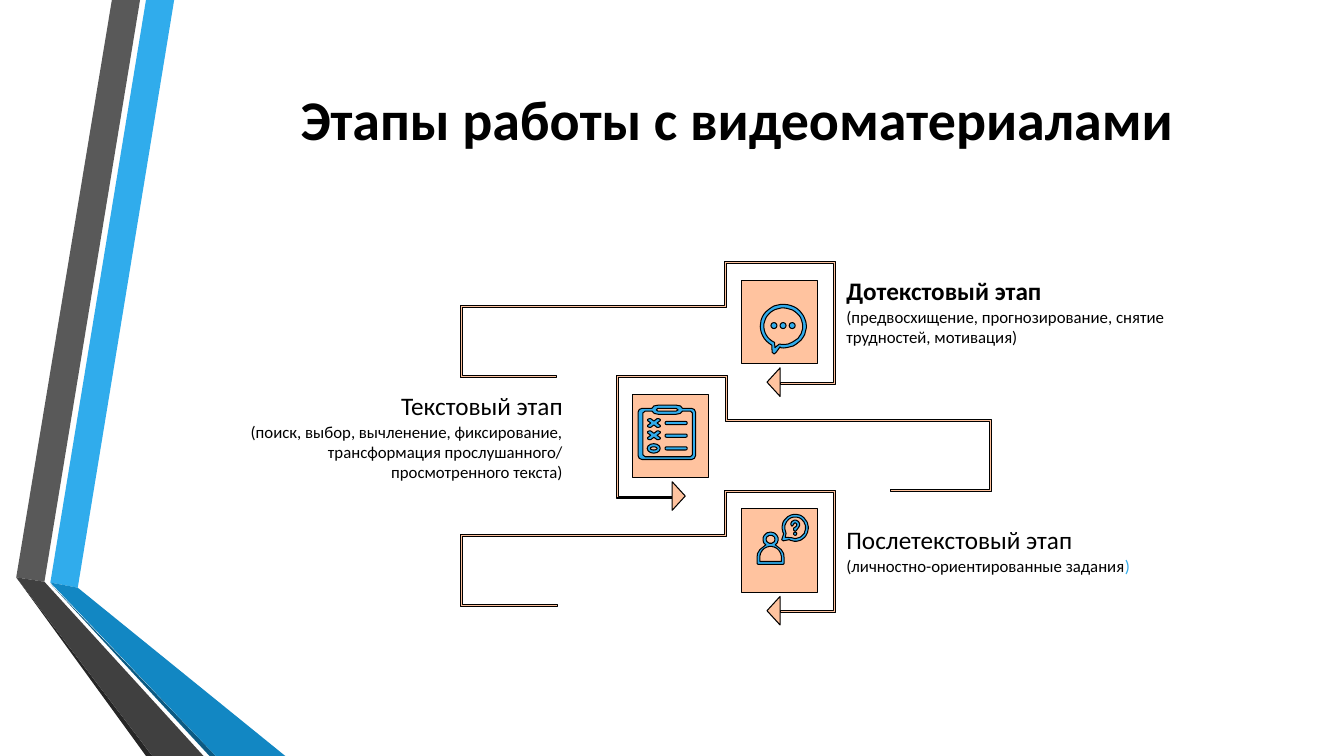
"""Build a slide on the three stages of work with video material."""
from dataclasses import dataclass
from math import cos, radians, sin

from pptx import Presentation
from pptx.dml.color import RGBColor
from pptx.enum.shapes import MSO_SHAPE
from pptx.enum.text import MSO_ANCHOR, PP_ALIGN
from pptx.util import Cm, Pt

OVAL, DONUT, PILL = MSO_SHAPE.OVAL, MSO_SHAPE.DONUT, MSO_SHAPE.ROUNDED_RECTANGLE
RECT = MSO_SHAPE.RECTANGLE
MIDDLE = MSO_ANCHOR.MIDDLE
LEFT, CENTER, RIGHT = PP_ALIGN.LEFT, PP_ALIGN.CENTER, PP_ALIGN.RIGHT
UNIT = Cm(0.01)


@dataclass(frozen=True)
class Theme:
    font: str = "Calibri"
    ink: str = "000000"
    peach: str = "FFC39F"
    blue: str = "30ACEC"
    navy: str = "0C5A82"
    deep: str = "1287C3"
    gray: str = "595959"
    coal: str = "262626"
    dark: str = "404040"
    title: int = 40
    head: int = 18
    note: int = 12
    edge: float = 0.75


theme = Theme()
deck = Presentation()
deck.slide_width, deck.slide_height = Cm(33.87), Cm(19.05)
slide = deck.slides.add_slide(deck.slide_layouts[6])
shapes = slide.shapes


def arc(x, y, wide, high, start, stop):
    """Return points on an ellipse between two angles."""
    turns = [radians(start + (stop - start) * i / 40) for i in range(41)]
    return [(x + wide * cos(a), y + high * sin(a)) for a in turns]


def draw(form, fill, edge=True):
    """Draw a preset (kind, x, y, w, h) or a list of closed loops."""
    if isinstance(form, tuple):
        shape = shapes.add_shape(form[0], *[n * UNIT for n in form[1:]])
    else:
        pen = shapes.build_freeform(*form[0][0], scale=UNIT)
        pen.add_line_segments(form[0][1:], close=True)
        for loop in form[1:]:
            pen.move_to(*loop[0])
            pen.add_line_segments(loop[1:], close=True)
        shape = pen.convert_to_shape()
    shape.shadow.inherit = False
    shape.fill.solid()
    shape.fill.fore_color.rgb = RGBColor.from_string(fill)
    if edge:
        shape.line.color.rgb = RGBColor.from_string(theme.ink)
        shape.line.width = Pt(theme.edge)
    else:
        shape.line.fill.background()
    return shape


strips = [
    (theme.blue, [(127, 1468), (196, 1481), (439, 0), (368, 0)]),
    (theme.gray, [(353, 0), (282, 0), (41, 1455), (112, 1466)]),
    (theme.coal, [(41, 1455), (368, 1905), (384, 1905)]),
    (theme.navy, [(127, 1471), (528, 1905), (544, 1905)]),
    (theme.deep, [(127, 1468), (544, 1905), (719, 1905), (196, 1481)]),
    (theme.dark, [(513, 1905), (112, 1466), (41, 1455), (384, 1905)]),
]
for color, loop in strips:
    draw([loop], color, edge=False)

arrow = [(1966, 927), (1933, 963), (1966, 999)]
for drop, flip, tail, box in [(0, False, 1402, 1869), (287, True, 1415, 1595),
                              (576, False, 1405, 1869)]:
    track = [(1826, 660), (1826, 770), (1161, 770), (1161, 952), (tail, 952),
             (tail, 947), (1166, 947), (1166, 775), (1831, 775), (1831, 664),
             (2101, 664), (2101, 963), (1966, 963), (1966, 968), (2106, 968),
             (2106, 660)]
    draw((RECT, box, 706 + drop, 191, 211), theme.peach)
    for loop in (track, arrow):
        draw([[(3660 - x if flip else x, y + drop) for x, y in loop]], theme.peach)

speech = [
    arc(1974, 822, 58, 55, 120, 458) + [(1966, 874), (1956, 888), (1951, 892), (1946, 888)],
    arc(1974, 822, 49, 46, 117, 462) + [(1953, 876)],
]
board = [
    [(1618, 1029), (1643, 1029), (1648, 1023), (1659, 1021), (1704, 1021), (1715, 1023),
     (1720, 1029), (1743, 1029), (1750, 1032), (1753, 1039), (1753, 1148), (1750, 1155),
     (1743, 1158), (1618, 1158), (1611, 1155), (1608, 1148), (1608, 1039), (1611, 1032)],
    [(1626, 1036), (1643, 1036), (1649, 1042), (1659, 1044), (1704, 1044), (1714, 1042),
     (1720, 1036), (1740, 1036), (1745, 1041), (1745, 1146), (1740, 1151), (1626, 1151),
     (1620, 1146), (1620, 1041)],
    [(1658, 1029), (1704, 1029), (1709, 1033), (1704, 1036), (1658, 1036), (1654, 1033)],
]
half = [(0, -5), (8, -11), (12, -11), (16, -9), (16, -6), (8, 0),
        (16, 6), (16, 9), (12, 11), (8, 11)]
cross = half + [(-x, -y) for x, y in half]
person = [
    arc(1942, 1359, 19, 18, 130, 410) + [
        (1969, 1385), (1975, 1395), (1976, 1405), (1976, 1420), (1974, 1422),
        (1910, 1422), (1908, 1420), (1908, 1405), (1909, 1395), (1915, 1385)],
    arc(1942, 1359, 11, 10, 0, 360),
    arc(1942, 1405, 27, 28, 180, 360) + [(1969, 1415), (1915, 1415)],
]
query = [
    arc(2004, 1330, 33, 34, 153, 477) + [(1974, 1363), (1970, 1360)],
    arc(2004, 1330, 26, 27, 150, 470) + [(1979, 1354)],
]
mark = [arc(2004, 1322, 11, 11, 180, 405) + [(2007, 1337), (2004, 1339), (2000, 1336),
                                             (2000, 1331), (2007, 1326)]
        + arc(2004, 1322, 4, 4, 20, -180) + [(1996, 1326)]]
for icon in (speech, board, person, query, mark, (OVAL, 2000, 1341, 8, 8)):
    draw(icon, theme.blue)
for i in range(3):
    draw((OVAL, 1943 + 23 * i, 813, 15, 15), theme.blue)
    draw((PILL, 1676, 1062 + 32 * i, 56, 8), theme.blue).adjustments[0] = 0.5
for y in (1066, 1097):
    draw([[(1648 + dx, y + dy) for dx, dy in cross]], theme.blue)
draw((DONUT, 1631, 1118, 33, 24), theme.blue).adjustments[0] = 0.33

texts = [
    ((4.65, 1.14, 27.84, 3.63), CENTER, (0.25, 0.25),
     [("Этапы работы с видеоматериалами", theme.title, True)]),
    ((21.08, 6.3, 8.99, 3.02), LEFT, (0.25, 0),
     [("Дотекстовый этап", theme.head, True),
      ("(предвосхищение, прогнозирование, снятие трудностей, мотивация)", theme.note, False)]),
    ((4.88, 9.37, 9.55, 3.18), RIGHT, (0.51, 0.25),
     [("Текстовый этап", theme.head, False),
      ("(поиск, выбор, вычленение, фиксирование, трансформация прослушанного/ "
       "просмотренного текста)", theme.note, False)]),
    ((21.08, 12.52, 8.99, 2.64), LEFT, (0.25, 0),
     [("Послетекстовый этап", theme.head, False),
      ("(личностно-ориентированные задания", theme.note, False)]),
]
for place, align, (left, right), lines in texts:
    frame = shapes.add_textbox(*map(Cm, place)).text_frame
    frame.word_wrap, frame.vertical_anchor = True, MIDDLE
    frame.margin_left, frame.margin_right = Cm(left), Cm(right)
    frame.margin_top, frame.margin_bottom = Cm(0.05), 0
    for i, (words, size, bold) in enumerate(lines):
        para = frame.add_paragraph() if i else frame.paragraphs[0]
        para.text, para.alignment, para.space_before = words, align, Pt(1)
        font = para.font
        font.name, font.size, font.bold = theme.font, Pt(size), bold
        font.color.rgb = RGBColor.from_string(theme.ink)

close = para.add_run()
close.text = ")"
close.font.color.rgb = RGBColor.from_string(theme.blue)

deck.save("out.pptx")
